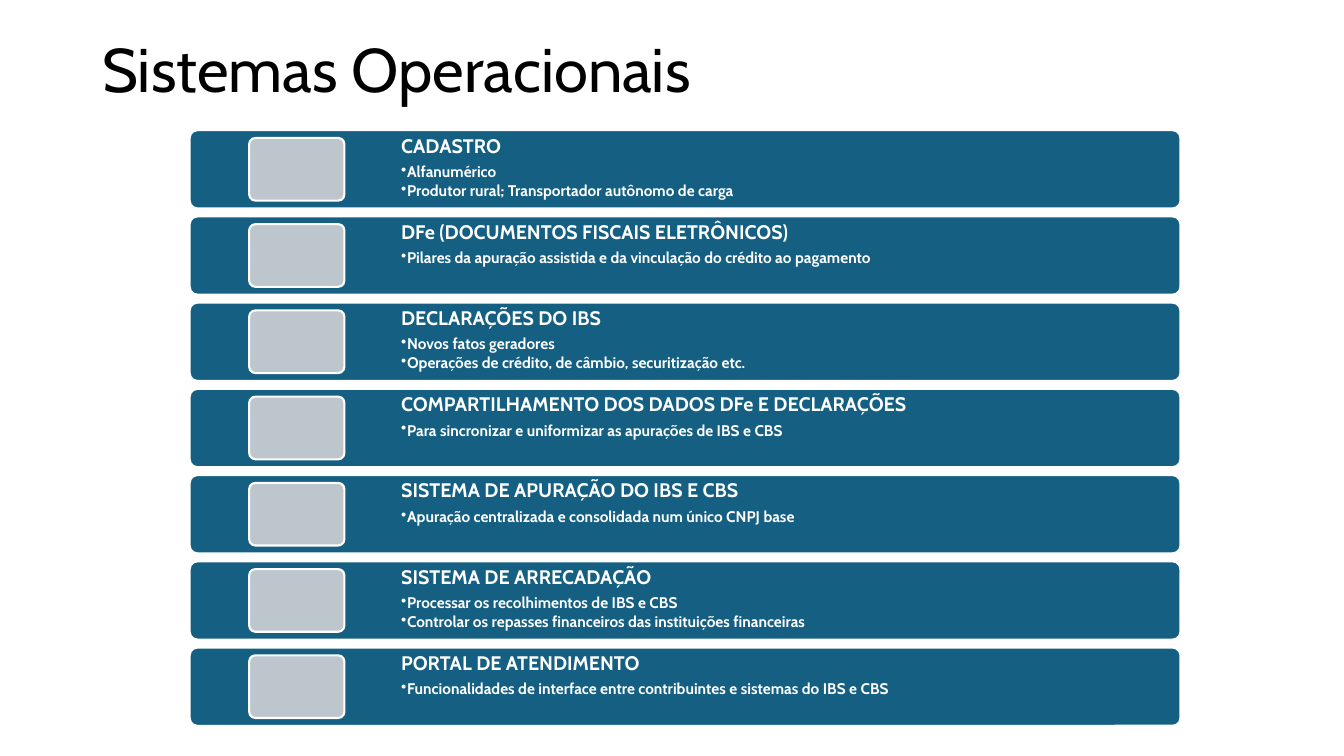
from dataclasses import dataclass

from lxml.etree import SubElement
from pptx import Presentation
from pptx.dml.color import RGBColor
from pptx.enum.shapes import MSO_SHAPE as Preset
from pptx.enum.text import MSO_ANCHOR as Anchor
from pptx.oxml.ns import qn
from pptx.util import Cm, Pt


@dataclass(frozen=True)
class Theme:
    font: str = "Cabin"
    black: RGBColor = RGBColor(0x00, 0x00, 0x00)
    white: RGBColor = RGBColor(0xFF, 0xFF, 0xFF)
    bar: RGBColor = RGBColor(0x15, 0x60, 0x82)
    tile: RGBColor = RGBColor(0xBD, 0xC5, 0xCD)
    title_size: Pt = Pt(44)
    heading_size: Pt = Pt(14)
    detail_size: Pt = Pt(11)
    outline: Pt = Pt(1.5)


THEME = Theme()

SYSTEMS = [
    ("CADASTRO",
     ["Alfanumérico", "Produtor rural; Transportador autônomo de carga"]),
    ("DFe (DOCUMENTOS FISCAIS ELETRÔNICOS)",
     ["Pilares da apuração assistida e da vinculação do crédito ao pagamento"]),
    ("DECLARAÇÕES DO IBS",
     ["Novos fatos geradores",
      "Operações de crédito, de câmbio, securitização etc."]),
    ("COMPARTILHAMENTO DOS DADOS DFe E DECLARAÇÕES",
     ["Para sincronizar e uniformizar as apurações de IBS e CBS"]),
    ("SISTEMA DE APURAÇÃO DO IBS E CBS",
     ["Apuração centralizada e consolidada num único CNPJ base"]),
    ("SISTEMA DE ARRECADAÇÃO",
     ["Processar os recolhimentos de IBS e CBS",
      "Controlar os repasses financeiros das instituições financeiras"]),
    ("PORTAL DE ATENDIMENTO",
     ["Funcionalidades de interface entre contribuintes e sistemas do IBS e CBS"]),
]


def add_text(paragraph, text, size, color, bold=False):
    paragraph.line_spacing = 0.9
    run = paragraph.add_run()
    run.text = text
    run.font.name = THEME.font
    run.font.size = size
    run.font.bold = bold
    run.font.color.rgb = color


def set_bullet(paragraph, indent):
    paragraph.level = 1
    properties = paragraph._p.get_or_add_pPr()
    properties.set("marL", str(indent))
    properties.set("indent", str(-indent))
    SubElement(properties, qn("a:buChar"), char="•")


def add_panel(slide, left, top, width, height, fill):
    panel = slide.shapes.add_shape(Preset.ROUNDED_RECTANGLE, left, top, width, height)
    panel.adjustments[0] = 0.1
    panel.shadow.inherit = False
    panel.fill.solid()
    panel.fill.fore_color.rgb = fill
    panel.line.color.rgb = THEME.white
    panel.line.width = THEME.outline


def add_title(slide, left, top, width, height):
    frame = slide.shapes.add_textbox(left, top, width, height).text_frame
    frame.word_wrap = True
    frame.vertical_anchor = Anchor.MIDDLE
    add_text(frame.paragraphs[0], "Sistemas Operacionais", THEME.title_size, THEME.black)


def add_system(slide, left, top, width, height, heading, details):
    """Draw one bar with its icon tile, heading and bulleted details."""
    add_panel(slide, left, top, width, height, THEME.bar)

    text_offset = Cm(5.18)
    frame = slide.shapes.add_textbox(
        left + text_offset, top, width - text_offset, height).text_frame
    frame.word_wrap = True
    inset = Cm(0.15)
    frame.margin_left = frame.margin_top = inset
    frame.margin_right = frame.margin_bottom = inset
    first = frame.paragraphs[0]
    first.space_after = Pt(4.9)
    add_text(first, heading, THEME.heading_size, THEME.white, bold=True)
    for detail in details:
        paragraph = frame.add_paragraph()
        set_bullet(paragraph, inset)
        paragraph.space_after = Pt(1.65)
        add_text(paragraph, detail, THEME.detail_size, THEME.white, bold=True)

    tile_height = Cm(1.58)
    add_panel(slide, left + Cm(1.5), top + (height - tile_height) // 2,
              Cm(2.4), tile_height, THEME.tile)


def add_system_list(slide, left, top, width, height):
    gap = Cm(0.2)
    bar_height = (height - gap * (len(SYSTEMS) - 1)) // len(SYSTEMS)
    for row, (heading, details) in enumerate(SYSTEMS):
        add_system(slide, left, top + row * (bar_height + gap), width, bar_height,
                   heading, details)


def main():
    deck = Presentation()
    deck.slide_width, deck.slide_height = Cm(33.87), Cm(19.05)
    slide = deck.slides.add_slide(deck.slide_layouts[6])
    add_title(slide, Cm(2.33), Cm(0.74), Cm(29.21), Cm(2.2))
    add_system_list(slide, Cm(4.78), Cm(3.28), Cm(24.97), Cm(15.01))
    deck.save("out.pptx")


if __name__ == "__main__":
    main()
